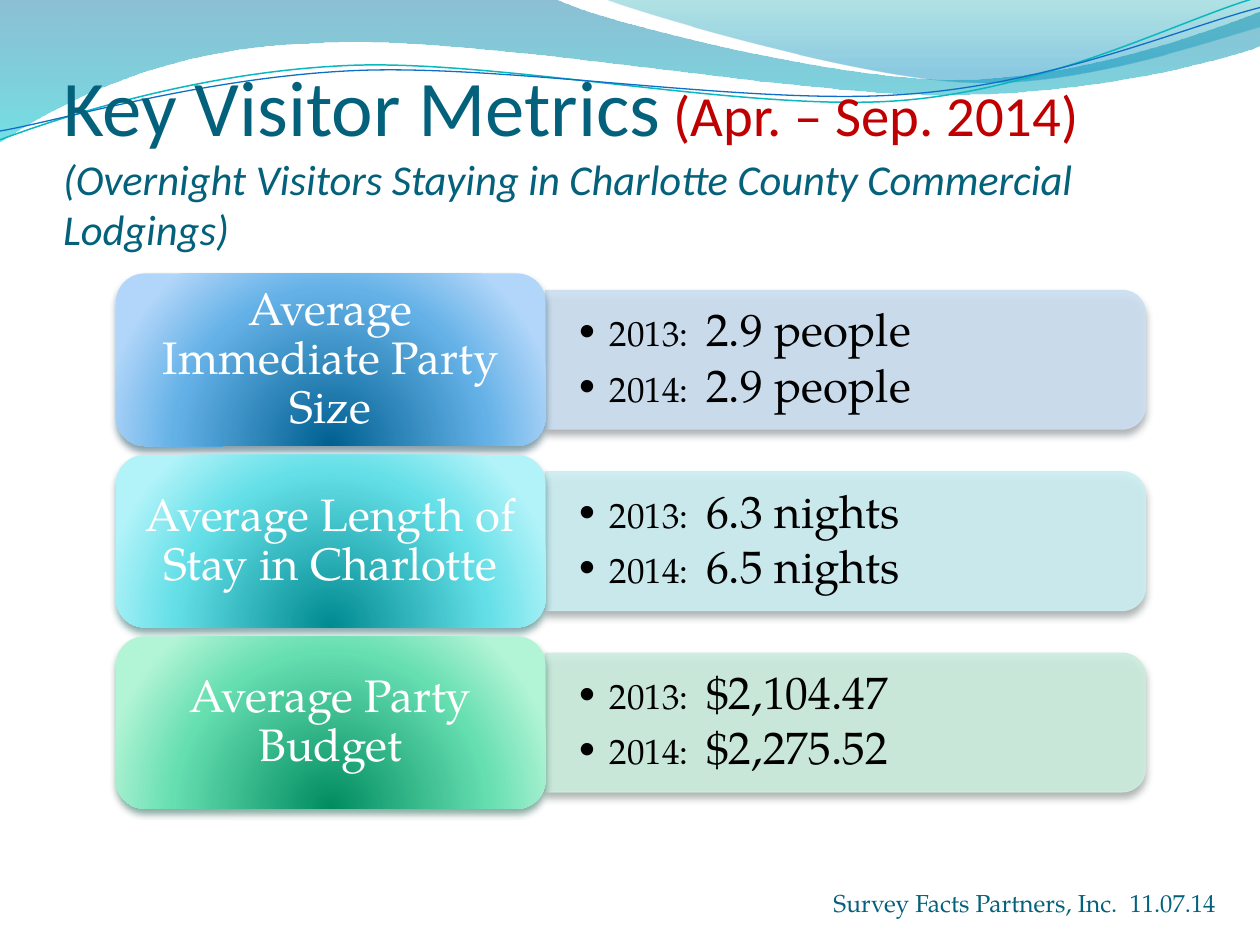
from dataclasses import dataclass

from lxml import etree
from pptx import Presentation
from pptx.dml.color import RGBColor
from pptx.enum import shapes as sh, text as tx
from pptx.oxml import parse_xml
from pptx.oxml.ns import nsdecls, qn
from pptx.util import Inches, Pt


@dataclass(frozen=True)
class Theme:
    heading_font: str = "Calibri"
    body_font: str = "TeX Gyre Pagella"
    navy: str = "04617B"
    red: str = "C00000"
    black: str = "000000"
    white: str = "FFFFFF"
    title_size: float = 45
    period_size: float = 32.4
    subtitle_size: float = 24.3
    metric_size: float = 26
    year_size: float = 20
    footer_size: float = 14


THEME = Theme()

# Label, year values, panel colour, panel shadow, label gradient, label shadow
METRICS = [
    ("Average Immediate Party Size", [("2013", "2.9 people"), ("2014", "2.9 people")],
     "CCDFF1", "474E55", ("006091", "64B1E7", "B1D6F9"), "00374C"),
    ("Average Length of Stay in Charlotte", [("2013", "6.3 nights"), ("2014", "6.5 nights")],
     "CCEEF1", "475455", ("008A91", "64DFE7", "B1F3F9"), "024B4E"),
    ("Average Party Budget", [("2013", "$2,104.47"), ("2014", "$2,275.52")],
     "CCEDDE", "47544E", ("008C60", "65DEB0", "B2F4D6"), "044A37"),
]

# Outlines in inches: two numbers are a straight step, six a Bézier curve
WIDE_WAVE = [(0, 0), (4.4, -0.01), (4.76, 0.17, 6.64, 0.63, 7.58, 0.63),
             (8.53, 0.63, 9.58, 0.26, 10, 0.09), (10.01, 0.36),
             (9.83, 0.44, 8.7, 0.76, 7.46, 0.75), (6.22, 0.75, 3.82, 0.28, 2.57, 0.34),
             (1.29, 0.36, 0.46, 0.83, -0.01, 1.13), (0, 0)]
RIGHT_WAVE = [(4.79, -0.01), (5.09, 0.11, 6.82, 0.62, 7.69, 0.65),
              (8.56, 0.69, 9.61, 0.32, 10, 0.21), (10, 0), (4.79, -0.01)]
TEAL_LINE = [(0, 1.11), (0.48, 0.93, 1.58, 0.57, 2.77, 0.52),
             (3.95, 0.47, 5.93, 0.89, 7.13, 0.8), (8.33, 0.71, 9.38, 0.15, 9.98, -0.02)]
BLUE_LINE = [(0, 1.04), (0.47, 0.96, 1.64, 0.61, 2.83, 0.56),
             (4.03, 0.51, 5.97, 0.84, 7.17, 0.75), (8.36, 0.67, 9.41, 0.21, 10, 0.06)]


def rgb(colour):
    return RGBColor.from_string(colour)


def set_font(font, size=None, colour=None, name=None):
    if size:
        font.size = Pt(size)
    if colour:
        font.color.rgb = rgb(colour)
    if name:
        font.name = name


def add_run(paragraph, wording, size):
    run = paragraph.add_run()
    run.text = wording
    run.font.size = Pt(size)
    return run


def set_frame(frame, margins, anchor=tx.MSO_ANCHOR.MIDDLE):
    """Wrap the text and set left, top, right and bottom margins."""
    frame.word_wrap = True
    frame.auto_size = tx.MSO_AUTO_SIZE.NONE
    frame.vertical_anchor = anchor
    (frame.margin_left, frame.margin_top,
     frame.margin_right, frame.margin_bottom) = map(Inches, margins)


def set_gradient(shape, stops, direction):
    """Fill with (position, colour, opacity) stops, all in percent."""
    shape.fill.background()
    stop_xml = "".join(
        f'<a:gs pos="{pos * 1000}"><a:srgbClr val="{colour}">'
        f'<a:alpha val="{opacity * 1000}"/></a:srgbClr></a:gs>'
        for pos, colour, opacity in stops)
    properties = shape.element.spPr
    properties.replace(properties.find(qn("a:noFill")), parse_xml(
        f'<a:gradFill {nsdecls("a")} rotWithShape="1">'
        f"<a:gsLst>{stop_xml}</a:gsLst>{direction}</a:gradFill>"))


def set_shadow(shape, colour):
    shape.shadow.inherit = False
    shape.element.spPr.find(qn("a:effectLst")).append(parse_xml(
        f'<a:outerShdw {nsdecls("a")} blurRad="{Pt(4.5)}" dist="{Pt(3)}" dir="5400000" '
        f'rotWithShape="0"><a:srgbClr val="{colour}"><a:alpha val="48000"/>'
        "</a:srgbClr></a:outerShdw>"))


def add_outline(slide, outline, close):
    """Draw through all points, then join each curve's three steps into one Bézier."""
    start, *segments = outline
    points = [(Inches(x), Inches(y)) for segment in segments
              for x, y in zip(segment[::2], segment[1::2])]
    builder = slide.shapes.build_freeform(*map(Inches, start))
    builder.add_line_segments(points, close=close)
    shape = builder.convert_to_shape()
    shape.shadow.inherit = False
    steps = iter(list(shape.element.spPr.iter(qn("a:lnTo"))))
    for segment in segments:
        step = next(steps)
        if len(segment) == 6:
            step.addprevious(etree.Element(qn("a:cubicBezTo")))
            curve = step.getprevious()
            for part in (step, next(steps), next(steps)):
                curve.append(part[0])
                part.getparent().remove(part)
    return shape


def add_waves(slide):
    downward = '<a:lin ang="5400000" scaled="0"/>'
    for outline, stops in (
            (WIDE_WAVE, [(0, "0074A1", 45), (100, "00C6CF", 55)]),
            (RIGHT_WAVE, [(0, "00A1A9", 30), (80, "008BBF", 45)])):
        wave = add_outline(slide, outline, close=True)
        set_gradient(wave, stops, downward)
        wave.line.fill.background()
    for outline, colour, width in ((TEAL_LINE, "0AB8BF", 0.85), (BLUE_LINE, "0F6FC6", 0.75)):
        strand = add_outline(slide, outline, close=False)
        strand.fill.background()
        strand.line.color.rgb = rgb(colour)
        strand.line.width = Pt(width)


def place_title(slide, left, top, width, height):
    title = slide.shapes.title
    title.left, title.top, title.width, title.height = map(Inches, (left, top, width, height))
    title.element.getparent().append(title.element)  # in front of the waves
    set_frame(title.text_frame, (0, 0.05, 0, 0), tx.MSO_ANCHOR.BOTTOM)
    heading = title.text_frame.paragraphs[0]
    heading.alignment = tx.PP_ALIGN.LEFT
    set_font(heading.font, colour=THEME.navy, name=THEME.heading_font)
    add_run(heading, "Key Visitor Metrics", THEME.title_size)
    period = add_run(heading, " (Apr. – Sep. 2014)", THEME.period_size)
    period.font.color.rgb = rgb(THEME.red)
    heading.add_line_break()
    subtitle = add_run(
        heading, "(Overnight Visitors Staying in Charlotte County Commercial Lodgings)",
        THEME.subtitle_size)
    subtitle.font.italic = True


def add_panel(slide, left, top, width, height, values, colour, shadow):
    # Turned a quarter so that the rounded corners lie on the right
    panel = slide.shapes.add_shape(
        sh.MSO_SHAPE.ROUND_2_SAME_RECTANGLE,
        Inches(left + (width - height) / 2), Inches(top + (height - width) / 2),
        Inches(height), Inches(width))
    panel.rotation = 90
    panel.fill.solid()
    panel.fill.fore_color.rgb = panel.line.color.rgb = rgb(colour)
    panel.line.width = Pt(0.75)
    for tint in panel.element.spPr.iter(qn("a:srgbClr")):
        etree.SubElement(tint, qn("a:alpha"), val="90000")
    set_shadow(panel, shadow)

    frame = slide.shapes.add_textbox(
        *map(Inches, (left - 0.01, top + 0.05, width - 0.06, height - 0.1))).text_frame
    set_frame(frame, (0.27, 0.14, 0.27, 0.14))
    for index, (year, value) in enumerate(values):
        entry = frame.add_paragraph() if index else frame.paragraphs[0]
        properties = entry._p.get_or_add_pPr()
        properties.set("marL", str(Inches(0.25)))
        properties.set("indent", str(-Inches(0.25)))
        etree.SubElement(properties, qn("a:buFont"), typeface=THEME.heading_font)
        etree.SubElement(properties, qn("a:buChar"), char="•")
        entry.line_spacing = 0.9
        entry.space_after = Pt(3.5)
        set_font(entry.font, colour=THEME.black, name=THEME.body_font)
        add_run(entry, f"{year}:  ", THEME.year_size)
        add_run(entry, value, THEME.metric_size)


def add_label(slide, left, top, width, height, wording, colours, shadow):
    label = slide.shapes.add_shape(
        sh.MSO_SHAPE.ROUNDED_RECTANGLE, *map(Inches, (left, top, width, height)))
    glow = '<a:path path="circle"><a:fillToRect l="50000" t="130000" r="50000" b="-30000"/></a:path>'
    set_gradient(label, [(pos, colour, 100) for pos, colour in zip((0, 68, 100), colours)], glow)
    label.line.fill.background()
    set_shadow(label, shadow)
    set_frame(label.text_frame, (0.1, 0.05, 0.1, 0.05))
    caption = label.text_frame.paragraphs[0]
    caption.text = wording
    caption.alignment = tx.PP_ALIGN.CENTER
    caption.line_spacing = 0.9
    set_font(caption.font, THEME.metric_size, THEME.white, THEME.body_font)


def add_metrics(slide, left, top, width, pitch):
    label_width, label_height, panel_height = 3.41, 1.37, 1.1
    for row, (wording, values, tint, tint_shadow, glow, glow_shadow) in enumerate(METRICS):
        row_top = top + row * pitch
        add_panel(slide, left + label_width, row_top + (label_height - panel_height) / 2,
                  width - label_width, panel_height, values, tint, tint_shadow)
        add_label(slide, left, row_top, label_width, label_height, wording, glow, glow_shadow)


def add_footer(slide, left, top, width, height):
    frame = slide.shapes.add_textbox(*map(Inches, (left, top, width, height))).text_frame
    set_frame(frame, (0.1, 0.05, 0.1, 0.05), tx.MSO_ANCHOR.TOP)
    credit = frame.paragraphs[0]
    credit.text = "Survey Facts Partners, Inc.  11.07.14"
    credit.alignment = tx.PP_ALIGN.RIGHT
    set_font(credit.font, THEME.footer_size, THEME.navy, THEME.body_font)


def main():
    deck = Presentation()
    deck.slide_width, deck.slide_height = Inches(10), Inches(7.5)
    slide = deck.slides.add_slide(deck.slide_layouts[5])
    add_waves(slide)
    add_footer(slide, 6.33, 7, 3.42, 0.34)
    place_title(slide, 0.5, 0.77, 9.33, 1.25)
    add_metrics(slide, 0.92, 2.17, 8.17, 1.44)
    deck.save("out.pptx")


if __name__ == "__main__":
    main()
